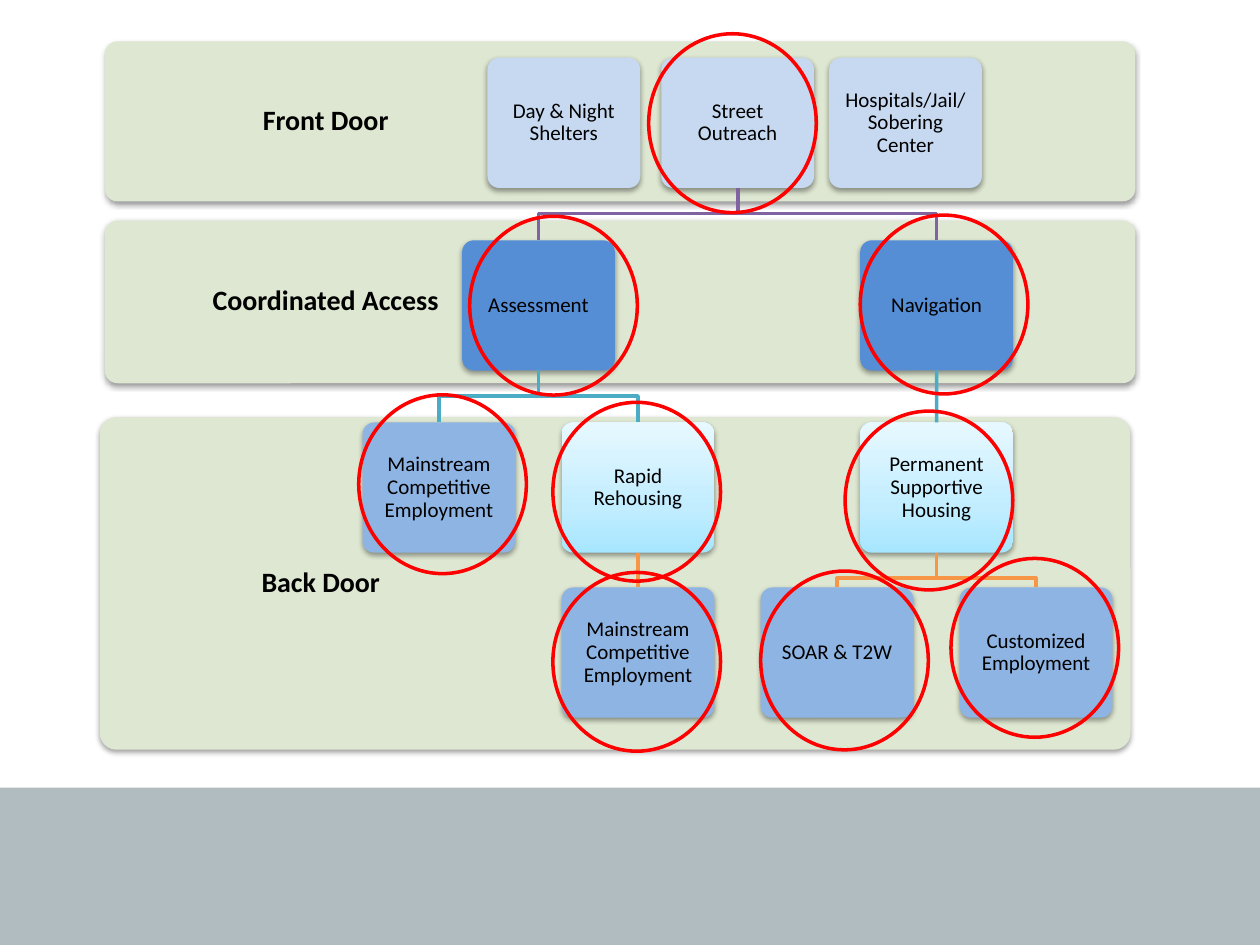
import copy

import pptx
import pptx.dml.color
import pptx.enum.shapes
import pptx.enum.text
import pptx.oxml.ns
import pptx.util
from lxml import etree

Pt = pptx.util.Pt
qn = pptx.oxml.ns.qn
SHAPE = pptx.enum.shapes.MSO_SHAPE

COLORS = {
    "panel": "DEE7D1", "footer": "B0BCC0", "text": "000000", "ring": "FF0000",
    "entry": "C6D9F1", "access": "558ED5", "employment": "8EB4E3",
    "housing_bottom": "A7E6FF", "housing_middle": "C1EDFF", "housing_top": "E7F8FF",
    "to_access": "8064A2", "to_services": "4BACC6", "to_support": "F79646",
}
HOUSING_STOPS = [(0, "housing_bottom"), (0.35, "housing_middle"), (1, "housing_top")]
CARD_W, CARD_H = 87.3, 74.4
HALF_STEP = 56.87  # half the distance between neighbouring cards
RING_W, RING_H = 95.8, 102.2
ELBOW_DROP = 14.6


def rgb(name):
    return pptx.dml.color.RGBColor.from_string(COLORS[name])


def add_shadow(shape):
    shape.shadow.inherit = False
    effects = shape._element.spPr.find(qn("a:effectLst"))
    outer = etree.SubElement(effects, qn("a:outerShdw"), blurRad="40000", dist="20000",
                             dir="5400000", rotWithShape="0")
    black = etree.SubElement(outer, qn("a:srgbClr"), val=COLORS["text"])
    etree.SubElement(black, qn("a:alpha"), val="38000")


def fill_housing(shape):
    shape.fill.gradient()
    shape.fill.gradient_angle = 90
    stops = shape._element.spPr.find(".//" + qn("a:gsLst"))
    stops.insert(1, copy.deepcopy(stops[0]))
    for stop, (position, color) in zip(shape.fill.gradient_stops, HOUSING_STOPS):
        stop.position = position
        stop.color.rgb = rgb(color)


def add_block(slide, box, label, color, size, radius, insets, bold=False):
    """Rounded, shadowed block with a centred label."""
    block = slide.shapes.add_shape(SHAPE.ROUNDED_RECTANGLE, *[Pt(v) for v in box])
    block.adjustments[0] = radius
    if color == "housing":
        fill_housing(block)
    else:
        block.fill.solid()
        block.fill.fore_color.rgb = rgb(color)
    block.line.fill.background()
    add_shadow(block)
    frame = block.text_frame
    frame.word_wrap = True
    frame.vertical_anchor = pptx.enum.text.MSO_ANCHOR.MIDDLE
    frame.margin_left, frame.margin_top, frame.margin_right, frame.margin_bottom = [
        Pt(v) for v in insets]
    frame.text = label
    paragraph = frame.paragraphs[0]
    paragraph.alignment = pptx.enum.text.PP_ALIGN.CENTER
    paragraph.line_spacing = 0.9
    font = paragraph.runs[0].font
    font.name, font.size, font.bold = "Calibri", Pt(size), bold
    font.color.rgb = rgb("text")
    return block


def add_region(slide, box, title, radius, cards):
    """Panel with its title and cards; card offsets are relative to the box."""
    add_block(slide, box, title, "panel", 16, radius, (8.6, 8.6, 345, 8.6), bold=True)
    return [add_block(slide, (box[0] + dx, box[1] + dy, CARD_W, CARD_H),
                      label, color, 12, 0.09, (4.3, 4.3, 4.3, 4.3))
            for label, color, dx, dy in cards]


def add_front_door(slide, box):
    return add_region(slide, box, "Front Door", 0.08, [
        ("Day & Night Shelters", "entry", 218.8, 9.4),
        ("Street Outreach", "entry", 318.1, 9.4),
        ("Hospitals/Jail/ Sobering Center", "entry", 414, 9.4),
    ])


def add_coordinated_access(slide, box):
    first = 204.3
    return add_region(slide, box, "Coordinated Access", 0.08, [
        ("Assessment", "access", first, 11.3),
        ("Navigation", "access", first + 4 * HALF_STEP, 11.3),
    ])


def add_back_door(slide, box):
    first, upper, lower = 150.2, 3, 97.3
    cards = [
        ("Mainstream Competitive Employment", "employment", 0, upper),
        ("Rapid Rehousing", "housing", 2, upper),
        ("Permanent Supportive Housing", "housing", 5, upper),
        ("Mainstream Competitive Employment", "employment", 2, lower),
        ("SOAR & T2W", "employment", 4, lower),
        ("Customized Employment", "employment", 6, lower),
    ]
    return add_region(slide, box, "Back Door", 0.05, [
        (label, color, first + step * HALF_STEP, dy) for label, color, step, dy in cards])


def style_link(link, color):
    link.line.color.rgb = rgb(color)
    link.line.width = Pt(2)


def add_straight_link(slide, parent, child, color):
    link = slide.shapes.add_connector(pptx.enum.shapes.MSO_CONNECTOR.STRAIGHT, 0, 0, 0, 0)
    link.begin_connect(parent, 2)
    link.end_connect(child, 0)
    style_link(link, color)
    etree.SubElement(link._element.spPr, qn("a:effectLst"))


def add_branch(slide, parent, child, color):
    """Stepped line from the bottom of the parent to the top of the child."""
    start_x, start_y = parent.left + parent.width // 2, parent.top + parent.height
    end_x = child.left + child.width // 2
    bend_y = start_y + Pt(ELBOW_DROP)
    builder = slide.shapes.build_freeform(start_x, start_y)
    builder.add_line_segments([(start_x, bend_y), (end_x, bend_y), (end_x, child.top)],
                              close=False)
    branch = builder.convert_to_shape()
    branch.fill.background()
    style_link(branch, color)
    branch.shadow.inherit = False


def add_ring(slide, card, dx, dy):
    ring = slide.shapes.add_shape(SHAPE.OVAL, card.left + Pt(dx), card.top + Pt(dy),
                                  Pt(RING_W), Pt(RING_H))
    ring.fill.background()
    style_link(ring, "ring")
    ring.shadow.inherit = False


def add_footer(slide, box):
    footer = slide.shapes.add_shape(SHAPE.RECTANGLE, *[Pt(v) for v in box])
    footer.fill.solid()
    footer.fill.fore_color.rgb = rgb("footer")
    footer.line.fill.background()
    footer.shadow.inherit = False


def main():
    deck = pptx.Presentation()
    deck.slide_width, deck.slide_height = Pt(720), Pt(540)
    slide = deck.slides.add_slide(deck.slide_layouts[6])
    add_footer(slide, (0, 450, 720, 90))

    # Regions
    back_cards = add_back_door(slide, (57, 238.4, 589, 190))
    assessment, navigation = add_coordinated_access(slide, (59.8, 126, 589, 93))
    outreach = add_front_door(slide, (59.8, 23.6, 589, 91.5))[1]
    mainstream, rapid, supportive, rapid_jobs, soar, customized = back_cards

    # Links between the levels
    for parent, children, color in [
        (outreach, (assessment, navigation), "to_access"),
        (assessment, (mainstream, rapid), "to_services"),
        (supportive, (soar, customized), "to_support"),
    ]:
        for child in children:
            add_branch(slide, parent, child, color)
    add_straight_link(slide, navigation, supportive, "to_services")
    add_straight_link(slide, rapid, rapid_jobs, "to_support")

    # Rings, offset from the corner of the card they mark
    for card, dx, dy in [
        (outreach, -7.2, -13.7), (mainstream, -2.2, -15.8), (assessment, 4.3, -13.7),
        (navigation, 0, -14.4), (rapid, -5, -11.5), (supportive, -8.6, -6.5),
        (customized, -5, -16.6), (soar, 0, -9.4), (rapid_jobs, -5, -8.6),
    ]:
        add_ring(slide, card, dx, dy)

    deck.save("out.pptx")


if __name__ == "__main__":
    main()
